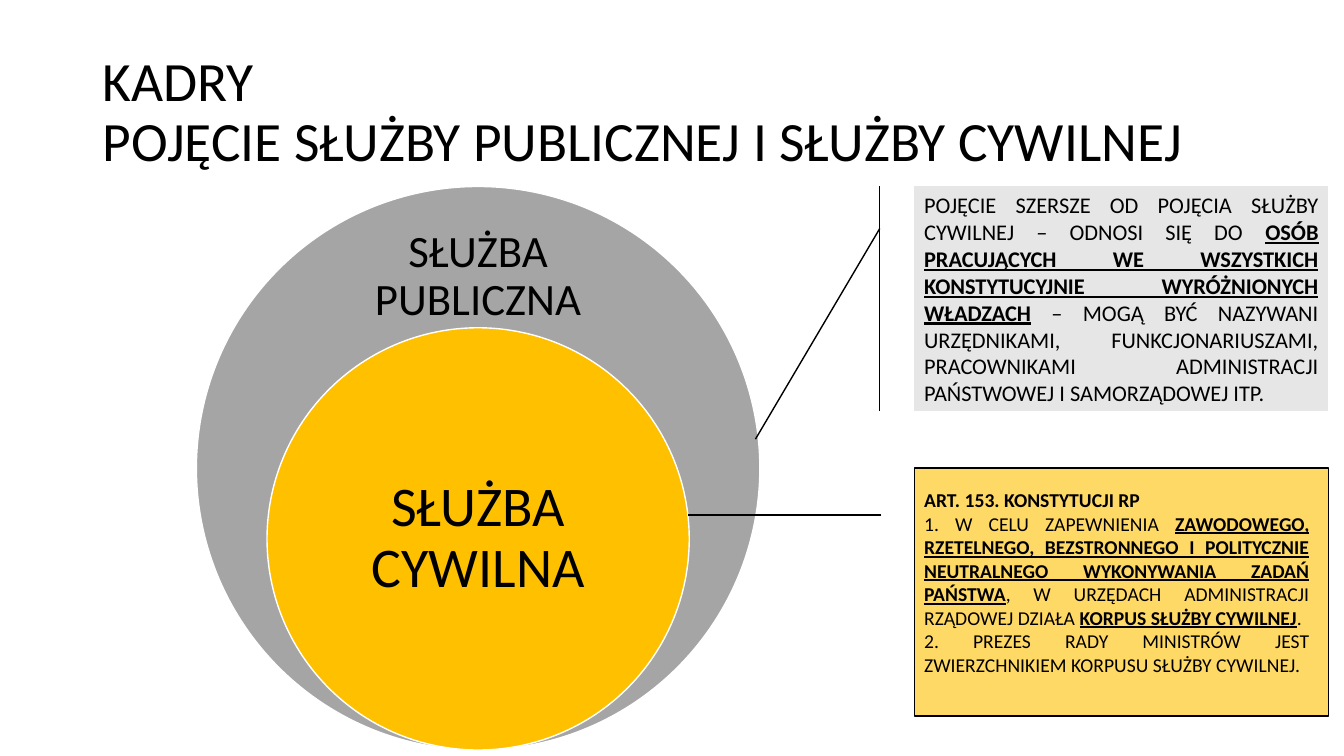
"""Build a slide on public service and the civil service."""
from dataclasses import dataclass

from pptx import Presentation
from pptx.dml.color import RGBColor
from pptx.enum.shapes import MSO_SHAPE as Kind
from pptx.enum.text import MSO_ANCHOR as Anchor, PP_ALIGN as Align
from pptx.util import Cm, Pt

FONT = "Calibri"
AXIS, BASE = 12.05, 18.9
SIDE, WIDE = 23.04, 10.44


@dataclass
class Run:
    text: str
    bold: bool = False
    under: bool = False


@dataclass
class Ring:
    size: float
    fill: str
    label: str
    top: float
    wide: float
    high: float
    inset: float
    font: float


@dataclass
class Callout:
    kind: Kind
    top: float
    high: float
    fill: str
    ends: tuple


def key(text: str) -> Run:
    return Run(text, True, True)


RINGS = [
    Ring(14.2, "A5A5A5", "SŁUŻBA PUBLICZNA", 5.77, 7.47, 2.41, 0.64, 32),
    Ring(10.64, "FFC000", "SŁUŻBA CYWILNA", 10.92, 7.54, 5.33, 0.79, 40),
]
CALLS = [
    Callout(Kind.LINE_CALLOUT_1_ACCENT_BAR, 4.7, 5.66, "E7E6E6", ()),
    Callout(Kind.LINE_CALLOUT_1, 11.79, 6.25, "FFD966",
            (0.19, -0.08, 0.19, -0.545)),
]
TITLE = [[Run("KADRY\nPOJĘCIE SŁUŻBY PUBLICZNEJ I SŁUŻBY CYWILNEJ")]]
SCOPE = [[
    Run("POJĘCIE SZERSZE OD POJĘCIA SŁUŻBY CYWILNEJ – ODNOSI SIĘ DO "),
    key("OSÓB PRACUJĄCYCH WE WSZYSTKICH KONSTYTUCYJNIE "
        "WYRÓŻNIONYCH WŁADZACH"),
    Run(" – MOGĄ BYĆ NAZYWANI URZĘDNIKAMI, FUNKCJONARIUSZAMI, "
        "PRACOWNIKAMI ADMINISTRACJI PAŃSTWOWEJ I SAMORZĄDOWEJ ITP."),
]]
LAW = [
    [Run("ART. 153. KONSTYTUCJI RP", True)],
    [
        Run("1. W CELU ZAPEWNIENIA "),
        key("ZAWODOWEGO, RZETELNEGO, BEZSTRONNEGO I POLITYCZNIE "
            "NEUTRALNEGO WYKONYWANIA ZADAŃ PAŃSTWA"),
        Run(", W URZĘDACH ADMINISTRACJI RZĄDOWEJ DZIAŁA "),
        key("KORPUS SŁUŻBY CYWILNEJ"),
        Run("."),
    ],
    [Run("2. PREZES RADY MINISTRÓW JEST ZWIERZCHNIKIEM KORPUSU "
         "SŁUŻBY CYWILNEJ.")],
]


def hue(code: str) -> RGBColor:
    return RGBColor.from_string(code)


def write(shape, paras: list, *, size: float, align=Align.LEFT,
          anchor=Anchor.MIDDLE, space: float = 1.0, inset: float = 0.25,
          color: str = "000000") -> None:
    frame = shape.text_frame
    frame.word_wrap = True
    frame.vertical_anchor = anchor
    frame.margin_left = frame.margin_right = Cm(inset)
    frame.margin_top = frame.margin_bottom = Cm(min(inset, 0.13)
                                                if inset <= 0.25 else inset)
    for i, runs in enumerate(paras):
        para = frame.add_paragraph() if i else frame.paragraphs[0]
        para.alignment = align
        para.line_spacing = space
        for item in runs:
            for j, line in enumerate(item.text.split("\n")):
                if j:
                    para.add_line_break()
                run = para.add_run()
                run.text = line
                font = run.font
                font.name, font.size = FONT, Pt(size)
                font.bold, font.underline = item.bold, item.under
                font.color.rgb = hue(color)


def box(slide, left: float, top: float, wide: float, high: float):
    return slide.shapes.add_textbox(Cm(left), Cm(top), Cm(wide), Cm(high))


def draw(slide, kind: Kind, left: float, top: float, wide: float,
         high: float, fill: str, edge: str):
    shape = slide.shapes.add_shape(kind, Cm(left), Cm(top), Cm(wide), Cm(high))
    shape.shadow.inherit = False
    shape.fill.solid()
    shape.fill.fore_color.rgb = hue(fill)
    shape.line.color.rgb = hue(edge)
    shape.line.width = Pt(1)
    return shape


def add_ring(slide, ring: Ring) -> None:
    draw(slide, Kind.OVAL, AXIS - ring.size / 2, BASE - ring.size,
         ring.size, ring.size, ring.fill, "FFFFFF")
    label = box(slide, AXIS - ring.wide / 2, ring.top, ring.wide, ring.high)
    write(label, [[Run(ring.label)]], size=ring.font, align=Align.CENTER,
          space=0.9, inset=ring.inset)


def add_call(slide, call: Callout):
    shape = draw(slide, call.kind, SIDE, call.top, WIDE, call.high,
                 call.fill, "000000")
    for i, end in enumerate(call.ends):
        shape.adjustments[i] = end
    return shape


def main() -> None:
    deck = Presentation()
    deck.slide_width, deck.slide_height = Cm(33.87), Cm(19.05)
    slide = deck.slides.add_slide(deck.slide_layouts[6])
    write(box(slide, 2.34, 1.02, 29.21, 3.68), TITLE, size=39.6, space=0.9)
    for ring in RINGS:
        add_ring(slide, ring)
    scope, _ = [add_call(slide, call) for call in CALLS]
    write(scope, SCOPE, size=16, align=Align.JUSTIFY)
    write(box(slide, SIDE, 12.17, 10.21, 5.82), LAW, size=14,
          align=Align.JUSTIFY, anchor=Anchor.TOP)
    deck.save("out.pptx")


if __name__ == "__main__":
    main()
